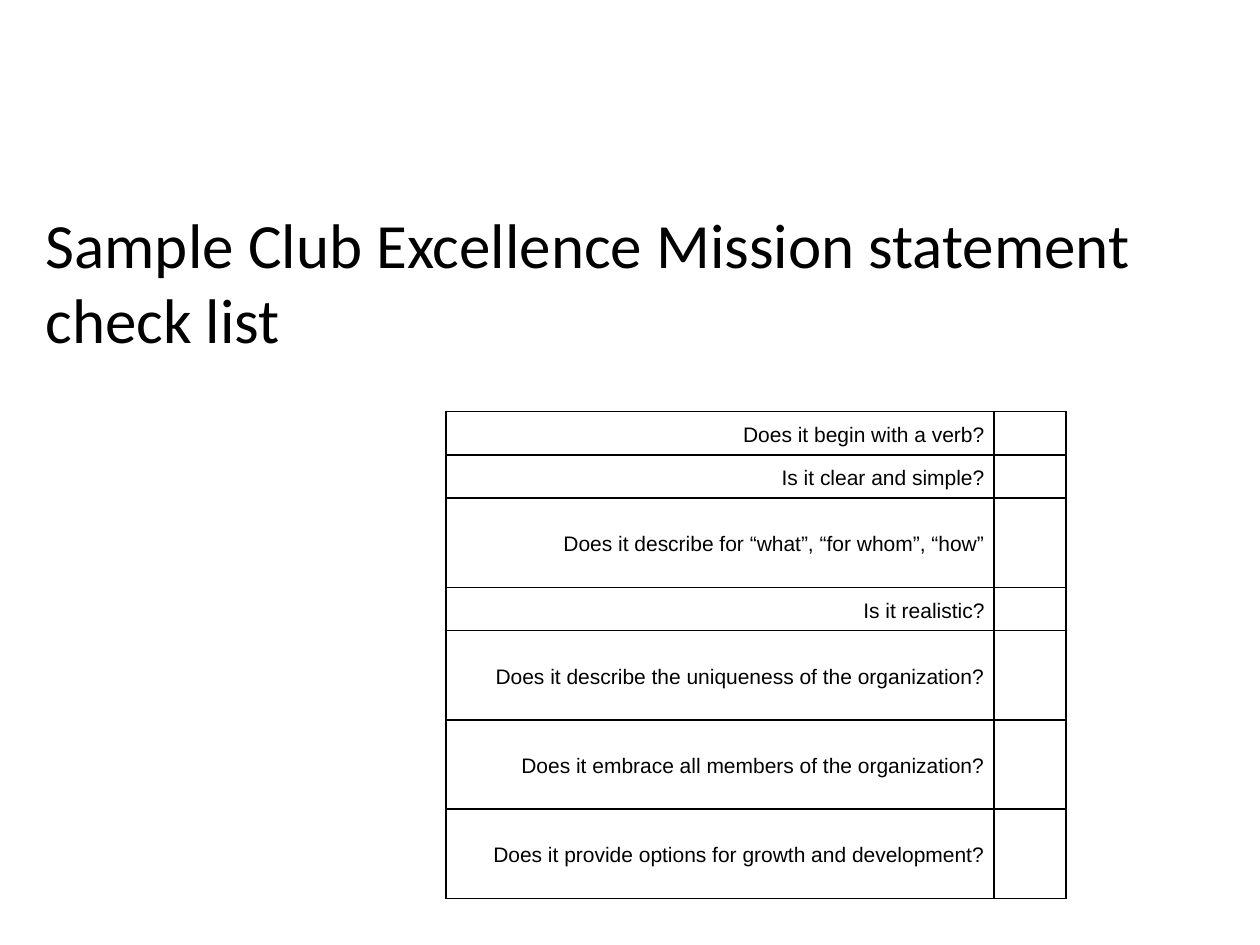
from lxml import etree
from pptx import Presentation
from pptx.dml.color import RGBColor
from pptx.enum.text import MSO_ANCHOR, PP_ALIGN
from pptx.oxml.ns import qn
from pptx.util import Cm, Pt

TOP, MIDDLE = MSO_ANCHOR.TOP, MSO_ANCHOR.MIDDLE
LEFT, RIGHT = PP_ALIGN.LEFT, PP_ALIGN.RIGHT
BLACK = RGBColor(0, 0, 0)
WHITE = RGBColor(255, 255, 255)

SHORT, TALL = 0.87, 1.8
COLUMNS = (11.05, 1.45)
QUESTIONS = (
    ("Does it begin with a verb?", SHORT),
    ("Is it clear and simple?", SHORT),
    ("Does it describe for “what”, “for whom”, “how”", TALL),
    ("Is it realistic?", SHORT),
    ("Does it describe the uniqueness of the organization?", TALL),
    ("Does it embrace all members of the organization?", TALL),
    ("Does it provide options for growth and development?", TALL),
)


def apply(obj, values):
    for name, value in values.items():
        setattr(obj, name, value)


class SlideBuilder:
    title_font = {"name": "Calibri", "size": Pt(36)}
    cell_font = {"name": "Arial", "size": Pt(12)}
    title_para = {"alignment": LEFT}
    cell_para = {"alignment": RIGHT, "line_spacing": 1.15, "space_after": Pt(10)}
    title_frame = {"word_wrap": True, "vertical_anchor": TOP, "margin_left": 0,
                   "margin_top": 0, "margin_right": 0, "margin_bottom": 0}
    cell_frame = {"vertical_anchor": MIDDLE, "margin_left": Cm(0.19),
                  "margin_top": 0, "margin_right": Cm(0.19), "margin_bottom": 0}
    border_width = Pt(1)

    def __init__(self, s):
        self.s = s
        fill = s.background.fill
        fill.solid()
        fill.fore_color.rgb = WHITE

    def text(self, tf, text, para, font):
        p = tf.paragraphs[0]
        apply(p, para)
        apply(p.font, font)
        p.font.color.rgb = BLACK
        if text:
            r = p.add_run()
            r.text = text
            apply(r.font, font)
            r.font.color.rgb = BLACK

    def title(self, text, left, top, width, height):
        sp = self.s.shapes.add_textbox(Cm(left), Cm(top), Cm(width), Cm(height))
        tf = sp.text_frame
        apply(tf, self.title_frame)
        self.text(tf, text, self.title_para, self.title_font)

    def borders(self, cell):
        tc_pr = cell._tc.get_or_add_tcPr()
        for side in ("a:lnL", "a:lnR", "a:lnT", "a:lnB"):
            ln = etree.SubElement(tc_pr, qn(side), w=str(self.border_width))
            fill = etree.SubElement(ln, qn("a:solidFill"))
            etree.SubElement(fill, qn("a:srgbClr"), val=str(BLACK))

    def checklist(self, rows, columns, left, top):
        height = sum(h for _, h in rows)
        sp = self.s.shapes.add_table(len(rows), len(columns), Cm(left), Cm(top),
                                     Cm(sum(columns)), Cm(height))
        table = sp.table
        apply(table, {"first_row": False, "horz_banding": False})
        for column, width in zip(table.columns, columns):
            column.width = Cm(width)
        for row, (question, row_height) in zip(table.rows, rows):
            row.height = Cm(row_height)
            for cell, text in zip(row.cells, (question, "")):
                apply(cell, self.cell_frame)
                self.borders(cell)
                cell.fill.background()
                self.text(cell.text_frame, text, self.cell_para, self.cell_font)


def main():
    prs = Presentation()
    prs.slide_width, prs.slide_height = Cm(25.4), Cm(19.05)
    builder = SlideBuilder(prs.slides.add_slide(prs.slide_layouts[6]))
    builder.title("Sample Club Excellence Mission statement check list",
                  0.92, 4.14, 22.86, 2.41)
    builder.checklist(QUESTIONS, COLUMNS, 8.99, 8.3)
    prs.save("out.pptx")


if __name__ == "__main__":
    main()
